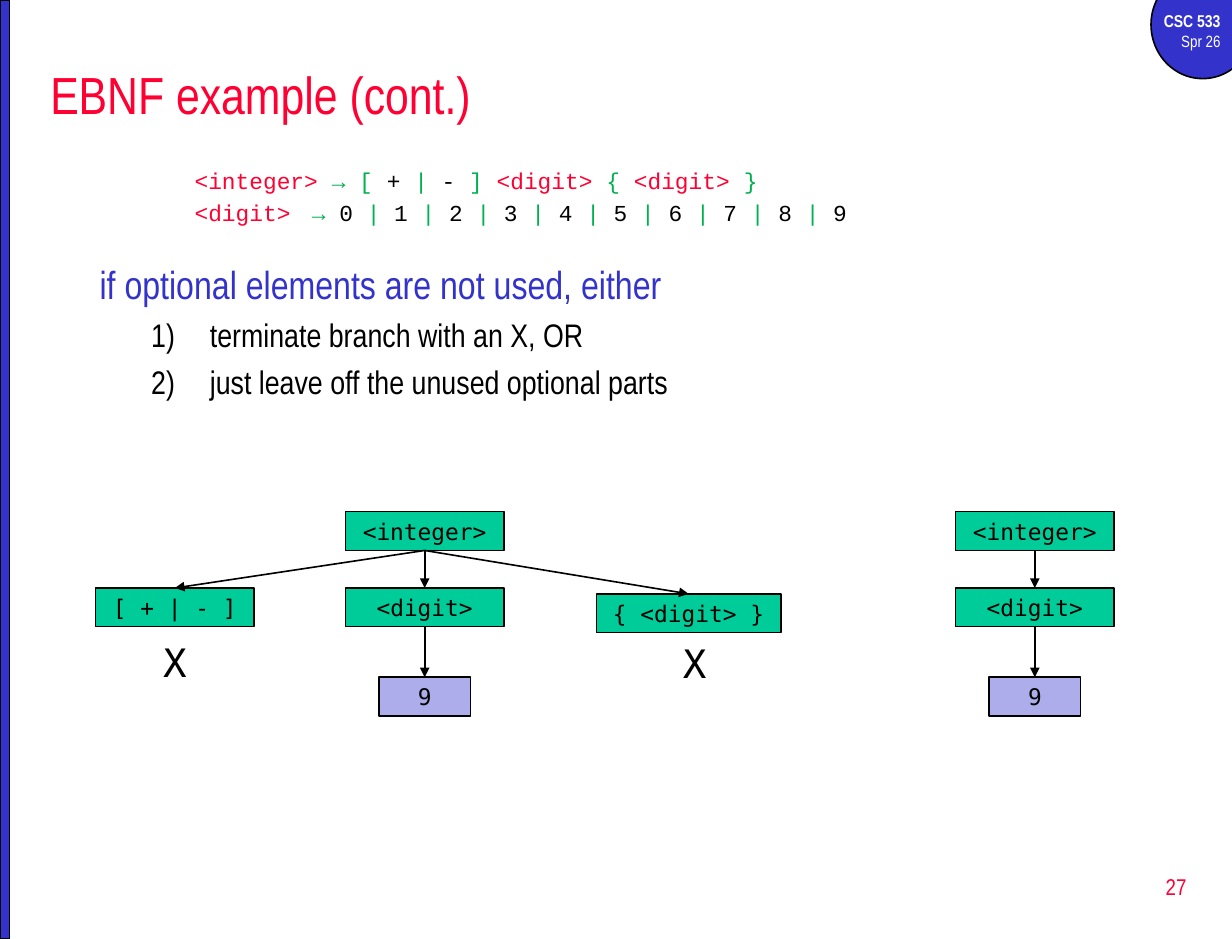
from pptx import Presentation
from pptx.dml.color import RGBColor
from pptx.enum.shapes import MSO_CONNECTOR, MSO_SHAPE
from pptx.enum.text import MSO_ANCHOR, PP_ALIGN
from pptx.oxml.ns import qn
from pptx.util import Inches, Pt
from lxml import etree

RECT, OVAL, STRAIGHT = MSO_SHAPE.RECTANGLE, MSO_SHAPE.OVAL, MSO_CONNECTOR.STRAIGHT
LEFT, CENTER, RIGHT = PP_ALIGN.LEFT, PP_ALIGN.CENTER, PP_ALIGN.RIGHT
MIDDLE = MSO_ANCHOR.MIDDLE
BLUE = RGBColor(0x33, 0x33, 0xCC)
RED = RGBColor(0xFF, 0x00, 0x33)
GREEN = RGBColor(0x00, 0xB0, 0x50)
TEAL = RGBColor(0x00, 0xCC, 0x99)
LILAC = RGBColor(0xAD, 0xAD, 0xEB)
BLACK = RGBColor(0, 0, 0)
WHITE = RGBColor(0xFF, 0xFF, 0xFF)
NARROW, COURIER, MONO = "Arial Narrow", "Courier New", "DejaVu Sans Mono"

prs = Presentation()
prs.slide_width, prs.slide_height = Inches(10.5), Inches(8)
s = prs.slides.add_slide(prs.slide_layouts[6])


def write(p, text, size=14, font=NARROW, color=BLACK, bold=False, align=LEFT):
    p.alignment = align
    r = p.add_run()
    r.text = text
    r.font.size, r.font.name, r.font.bold = Pt(size), font, bold
    r.font.color.rgb = color


def add_box(shape, left, top, width, height, fill):
    sp = s.shapes.add_shape(shape, Inches(left), Inches(top), Inches(width), Inches(height))
    sp.shadow.inherit = False
    sp.fill.solid()
    sp.fill.fore_color.rgb = fill
    sp.line.color.rgb = BLACK
    sp.line.width = Pt(1)
    return sp


# Course badge and side bar
add_box(OVAL, 9.81, -0.25, 0.88, 0.92, BLUE)
tf = s.shapes.add_textbox(Inches(9.67), Inches(0.04), Inches(0.83), Inches(0.46)).text_frame
tf.word_wrap = True
write(tf.paragraphs[0], "CSC 533", size=10.5, color=WHITE, bold=True, align=RIGHT)
write(tf.add_paragraph(), "Spr 26", size=10, color=WHITE, align=RIGHT)
add_box(RECT, 0, 0, 0.08, 8, BLUE)

# Title
tf = s.shapes.add_textbox(Inches(0.33), Inches(0.42), Inches(9.92), Inches(0.75)).text_frame
tf.word_wrap = True
tf.vertical_anchor = MIDDLE
write(tf.paragraphs[0], "EBNF example (cont.)", size=32, color=RED)

# Grammar rules
integer_rule = [("<integer> ", RED), ("→ [", GREEN), (" + ", BLACK), ("|", GREEN),
                (" - ", BLACK), ("] ", GREEN), ("<digit> ", RED), ("{ ", GREEN),
                ("<digit> ", RED), ("}", GREEN)]
digit_rule = [("<digit> \t", RED), ("→", GREEN), (" 0", BLACK)]
for digit in range(1, 10):
    digit_rule += [(" |", GREEN), (f" {digit}", BLACK)]

tf = s.shapes.add_textbox(Inches(0.75), Inches(1.37), Inches(9.52), Inches(1.79)).text_frame
tf.word_wrap = True
for i, rule in enumerate([integer_rule, digit_rule]):
    p = tf.add_paragraph() if i else tf.paragraphs[0]
    p._p.get_or_add_pPr().set("marL", str(Inches(0.81)))
    if i:
        p.space_before = Pt(3)
    for text, color in rule:
        write(p, text, font=COURIER, color=color)

# Options for unused elements
p = tf.add_paragraph()
p.space_before = Pt(21)
write(p, "if optional elements are not used, either", size=24, color=BLUE)
for text in ["terminate branch with an X, OR", "just leave off the unused optional parts"]:
    p = tf.add_paragraph()
    p.space_before = Pt(4.8)
    pPr = p._p.get_or_add_pPr()
    pPr.set("marL", str(Inches(0.94)))
    pPr.set("indent", str(Inches(-0.5)))
    etree.SubElement(pPr, qn("a:buFont")).set("typeface", "+mj-lt")
    etree.SubElement(pPr, qn("a:buAutoNum")).set("type", "arabicParenR")
    write(p, text, size=20)

# Page number
tf = s.shapes.add_textbox(Inches(8.02), Inches(7.29), Inches(2.19), Inches(0.53)).text_frame
tf.word_wrap = True
tf.vertical_anchor = MIDDLE
write(tf.paragraphs[0], "27", color=RED, align=RIGHT)

# Parse tree nodes: name, text, centre, top, width, fill
nodes = {}
for name, text, center, top, width, fill in [
    ("integer", "<integer>", 3.62, 4.36, 1.35, TEAL),
    ("sign", "[ + | - ]", 1.49, 5.01, 1.35, TEAL),
    ("digit", "<digit>", 3.62, 5.01, 1.35, TEAL),
    ("repeat", "{ <digit> }", 5.87, 5.06, 1.57, TEAL),
    ("nine", "9", 3.62, 5.77, 0.78, LILAC),
    ("short integer", "<integer>", 8.82, 4.36, 1.35, TEAL),
    ("short digit", "<digit>", 8.82, 5.01, 1.35, TEAL),
    ("short nine", "9", 8.82, 5.77, 0.78, LILAC),
]:
    sp = add_box(RECT, center - width / 2, top, width, 0.33, fill)
    sp.text_frame.word_wrap = False
    sp.text_frame.vertical_anchor = MIDDLE
    write(sp.text_frame.paragraphs[0], text, font=MONO, align=CENTER)
    nodes[name] = sp

# Branches from parent to child
for parent, child in [
    ("integer", "sign"), ("integer", "digit"), ("integer", "repeat"), ("digit", "nine"),
    ("short integer", "short digit"), ("short digit", "short nine"),
]:
    c = s.shapes.add_connector(STRAIGHT, 0, 0, 0, 0)
    c.begin_connect(nodes[parent], 2)
    c.end_connect(nodes[child], 0)
    c.line.color.rgb = BLACK
    c.line.width = Pt(1)
    etree.SubElement(c.line._get_or_add_ln(), qn("a:tailEnd")).set("type", "triangle")
    etree.SubElement(c._element.spPr, qn("a:effectLst"))

# Terminated branches
for left, top in [(1.07, 5.39), (5.5, 5.4)]:
    tf = s.shapes.add_textbox(Inches(left), Inches(top), Inches(0.84), Inches(0.5)).text_frame
    tf.word_wrap = True
    write(tf.paragraphs[0], "X", size=24, font=MONO, align=CENTER)

prs.save("out.pptx")
